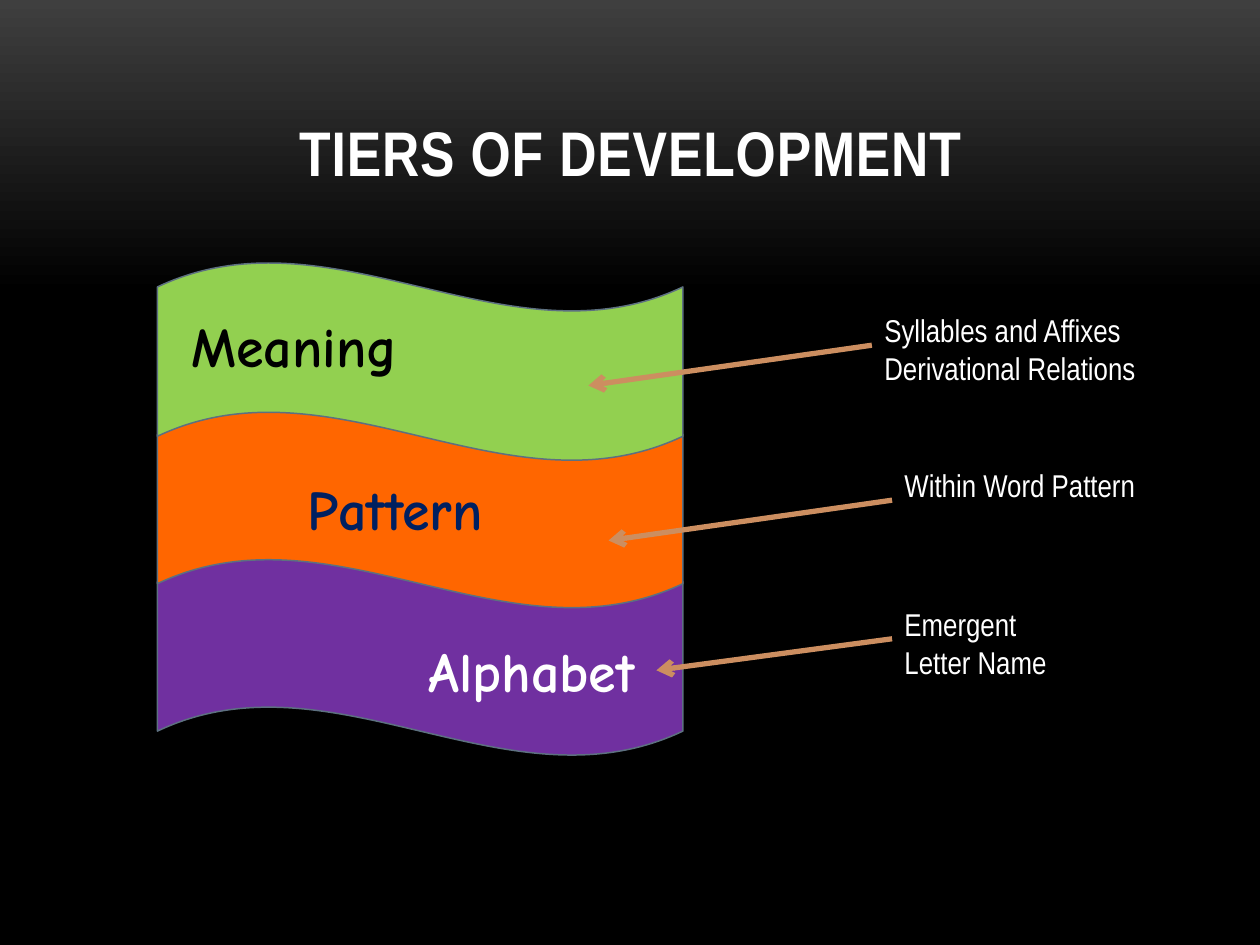
from lxml import etree
from pptx import Presentation
from pptx.dml.color import RGBColor
from pptx.enum.shapes import MSO_CONNECTOR, MSO_SHAPE
from pptx.enum.text import MSO_ANCHOR, PP_ALIGN
from pptx.oxml.ns import qn
from pptx.util import Inches, Pt

STRAIGHT = MSO_CONNECTOR.STRAIGHT
WAVE = MSO_SHAPE.WAVE
TOP, BOTTOM = MSO_ANCHOR.TOP, MSO_ANCHOR.BOTTOM
LEFT, CENTER = PP_ALIGN.LEFT, PP_ALIGN.CENTER

COLORS = {
    "glow": "3F3F3F", "black": "000000", "white": "FFFFFF", "navy": "002060",
    "green": "92D050", "orange": "FF6600", "purple": "7030A0",
    "outline": "5D7080", "arrow": "CC8E60",
}

TITLE = "TIERS OF DEVELOPMENT"
TITLE_FORMAT = {"name": "Arial Narrow", "size": Pt(36), "bold": True}
TIER_FORMAT = {"name": "Comic Neue", "size": Pt(32), "bold": True}
STAGE_FORMAT = {"name": "Arial Narrow", "size": Pt(18)}

# Top tier first; places are (left, top), arrow_run is (left, down) from the stages
TIERS = [
    {"name": "Meaning", "fill": "green", "color": "black", "name_at": (1.42, 2.42),
     "stages": ["Syllables and Affixes", "Derivational Relations"],
     "stages_at": (6.92, 2.42), "arrow_run": (2.25, 0.32)},
    {"name": "Pattern", "fill": "orange", "color": "navy", "name_at": (2.34, 3.72),
     "stages": ["Within Word Pattern"],
     "stages_at": (7.08, 3.65), "arrow_run": (2.25, 0.32)},
    {"name": "Alphabet", "fill": "purple", "color": "white", "name_at": (3.3, 5),
     "stages": ["Emergent", "Letter Name"],
     "stages_at": (7.08, 4.75), "arrow_run": (1.87, 0.25)},
]
WAVE_LEFT, WAVE_TOP, WAVE_WIDTH, WAVE_HEIGHT = 1.25, 2.08, 4.17, 1.58
WAVE_STEP = 1.17
ARROW_DROP = 0.32  # from the top of the stages to the start of the arrow


def rgb(color):
    return RGBColor.from_string(COLORS[color])


def paint_background(slide):
    fill = slide.background.fill
    fill.gradient()
    fill.gradient_angle = 270
    for stop, (position, color) in zip(fill.gradient_stops, [(0, "glow"), (0.31, "black")]):
        stop.position = position
        stop.color.rgb = rgb(color)


def add_text(slide, lines, place, size, color, font_format, align=LEFT, anchor=TOP):
    box = slide.shapes.add_textbox(*map(Inches, (*place, *size)))
    frame = box.text_frame
    frame.word_wrap = True
    frame.vertical_anchor = anchor
    frame.text = "\n".join(lines)
    for para in frame.paragraphs:
        para.alignment = align
        for span in para.runs:
            span.font.color.rgb = rgb(color)
            for attribute, value in font_format.items():
                setattr(span.font, attribute, value)
    return box


def add_wave(slide, top, color):
    wave = slide.shapes.add_shape(
        WAVE, *map(Inches, (WAVE_LEFT, top, WAVE_WIDTH, WAVE_HEIGHT)))
    wave.shadow.inherit = False
    wave.fill.solid()
    wave.fill.fore_color.rgb = rgb(color)
    wave.line.color.rgb = rgb("outline")
    wave.line.width = Pt(0.85)


def add_arrow(slide, start, run):
    end = (start[0] - run[0], start[1] + run[1])
    arrow = slide.shapes.add_connector(STRAIGHT, *map(Inches, (*start, *end)))
    arrow.line.color.rgb = rgb("arrow")
    arrow.line.width = Pt(3)
    properties = arrow.element.spPr
    etree.SubElement(properties.find(qn("a:ln")), qn("a:tailEnd"), type="arrow")
    etree.SubElement(properties, qn("a:effectLst"))


def main():
    deck = Presentation()
    deck.slide_width, deck.slide_height = Inches(10), Inches(7.5)
    slide = deck.slides.add_slide(deck.slide_layouts[6])
    paint_background(slide)

    title = add_text(slide, [TITLE], (0.67, 0.3), (8.67, 1.25), "white",
                     TITLE_FORMAT, CENTER, BOTTOM)
    title.text_frame.paragraphs[0].runs[0].font._element.set("spc", "50")

    # Lower waves go behind the ones above them
    for row, tier in reversed(list(enumerate(TIERS))):
        add_wave(slide, WAVE_TOP + row * WAVE_STEP, tier["fill"])

    for tier in TIERS:
        add_text(slide, [tier["name"]], tier["name_at"], (1.92, 0.64),
                 tier["color"], TIER_FORMAT)
        left, top = tier["stages_at"]
        add_arrow(slide, (left, top + ARROW_DROP), tier["arrow_run"])
        height = 0.09 + 0.31 * len(tier["stages"])
        add_text(slide, tier["stages"], (left, top), (2.58, height),
                 "white", STAGE_FORMAT)

    deck.save("out.pptx")


if __name__ == "__main__":
    main()
